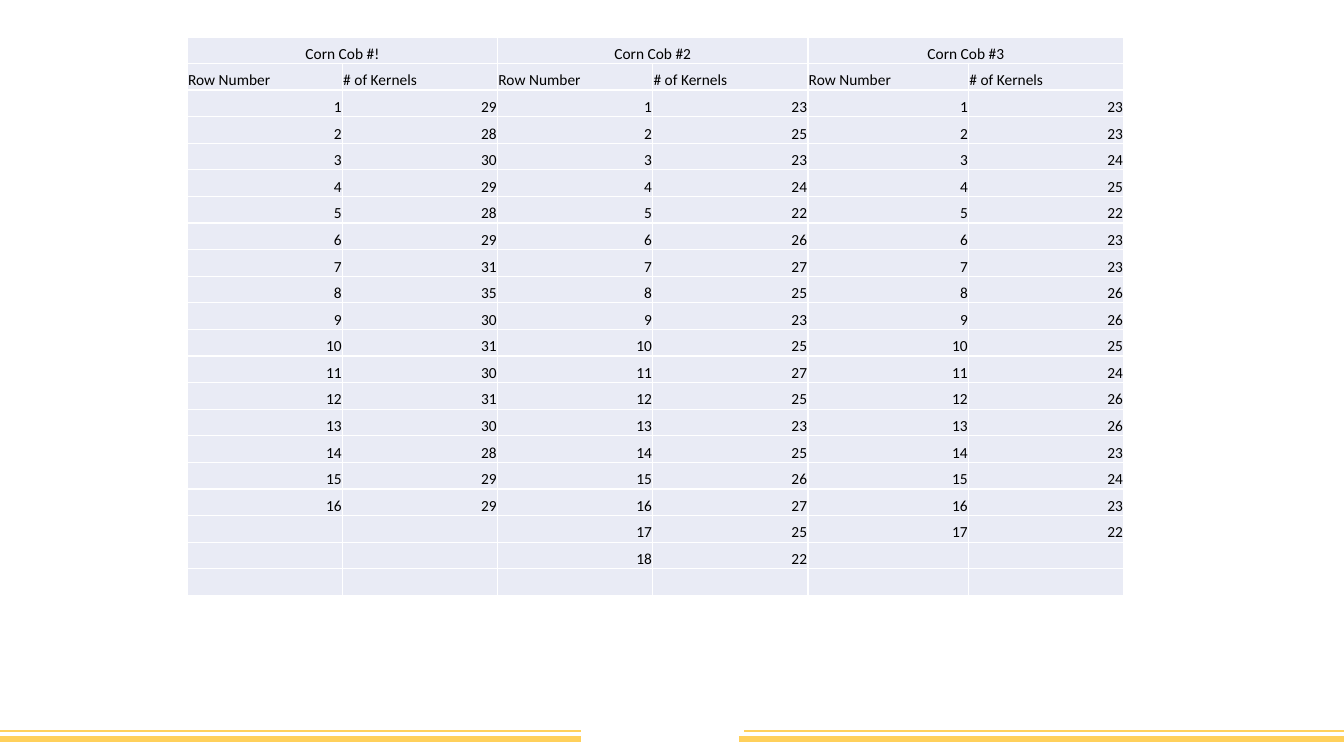
from dataclasses import dataclass

from lxml.etree import SubElement
from pptx import Presentation
from pptx.dml.color import RGBColor
from pptx.enum.shapes import MSO_CONNECTOR
from pptx.enum.text import MSO_ANCHOR, PP_ALIGN
from pptx.oxml.ns import qn
from pptx.util import Cm, Pt


@dataclass(frozen=True)
class Theme:
    gold: RGBColor = RGBColor.from_string("FFD05B")
    pale: RGBColor = RGBColor.from_string("E9EBF5")
    ink: RGBColor = RGBColor.from_string("000000")
    font: str = "Calibri"
    size: int = 11
    thick: float = 4.5
    thin: float = 1.5


THEME = Theme()
TEXT = {"name": THEME.font, "size": Pt(THEME.size)}
CELL = {
    "vertical_anchor": MSO_ANCHOR.BOTTOM,
    "margin_left": Cm(0.02),
    "margin_right": Cm(0.02),
    "margin_top": Cm(0.02),
    "margin_bottom": Cm(0),
}

# Kernels in each row of each cob
COBS = {
    "Corn Cob #!": [29, 28, 30, 29, 28, 29, 31, 35, 30, 31, 30, 31, 30, 28, 29, 29],
    "Corn Cob #2": [23, 25, 23, 24, 22, 26, 27, 25, 23, 25, 27, 25, 23, 25, 26, 27, 25, 22],
    "Corn Cob #3": [23, 23, 24, 25, 22, 23, 23, 26, 26, 25, 24, 26, 26, 23, 24, 23, 22],
}
HEADS = ("Row Number", "# of Kernels")
ROWS = 21
HIGH = 0.67
WIDTHS = (3.91, 3.91, 3.91, 3.91, 4.05, 3.91)

# Left end, right end, height on the slide, weight
RULES = (
    (18.62, 33.87, 18.62, THEME.thick),
    (-0.02, 14.63, 18.62, THEME.thick),
    (-0.02, 14.63, 18.42, THEME.thin),
    (18.75, 33.87, 18.42, THEME.thin),
)


def style(item, look):
    for key, value in look.items():
        setattr(item, key, value)


def add_rule(slide, left, right, y, weight):
    rule = slide.shapes.add_connector(
        MSO_CONNECTOR.STRAIGHT, Cm(left), Cm(y), Cm(right), Cm(y))
    rule.line.color.rgb = THEME.gold
    rule.line.width = Pt(weight)
    SubElement(rule._element.spPr, qn("a:effectLst"))


def clear_cell(cell):
    style(cell, CELL)
    cell.fill.solid()
    cell.fill.fore_color.rgb = THEME.pale
    # Keep blank rows as low as the others
    end = SubElement(cell.text_frame.paragraphs[0]._p, qn("a:endParaRPr"))
    end.set("sz", str(THEME.size * 100))


def write(cell, text, align):
    para = cell.text_frame.paragraphs[0]
    para.alignment = align
    run = para.add_run()
    run.text = str(text)
    style(run.font, TEXT)
    run.font.color.rgb = THEME.ink


def add_grid(slide):
    frame = slide.shapes.add_table(
        ROWS, len(WIDTHS), Cm(4.72), Cm(0.93), Cm(sum(WIDTHS)), Cm(ROWS * HIGH))
    grid = frame.table
    style(grid, {"first_row": False, "horz_banding": False})
    for col, width in zip(grid.columns, WIDTHS):
        col.width = Cm(width)
    for row in grid.rows:
        row.height = Cm(HIGH)
    for cell in grid.iter_cells():
        clear_cell(cell)
    return grid


def fill_cob(grid, left, title, counts):
    top = grid.cell(0, left)
    top.merge(grid.cell(0, left + 1))
    write(top, title, PP_ALIGN.CENTER)
    for shift, head in enumerate(HEADS):
        write(grid.cell(1, left + shift), head, PP_ALIGN.LEFT)
    for row, count in enumerate(counts, 1):
        write(grid.cell(row + 1, left), row, PP_ALIGN.RIGHT)
        write(grid.cell(row + 1, left + 1), count, PP_ALIGN.RIGHT)


def main():
    deck = Presentation()
    style(deck, {"slide_width": Cm(33.87), "slide_height": Cm(19.05)})
    slide = deck.slides.add_slide(deck.slide_layouts[6])

    # Gold rules at the foot
    for rule in RULES:
        add_rule(slide, *rule)

    # Table of kernel counts
    grid = add_grid(slide)
    for place, (title, counts) in enumerate(COBS.items()):
        fill_cob(grid, place * len(HEADS), title, counts)

    deck.save("out.pptx")


if __name__ == "__main__":
    main()
